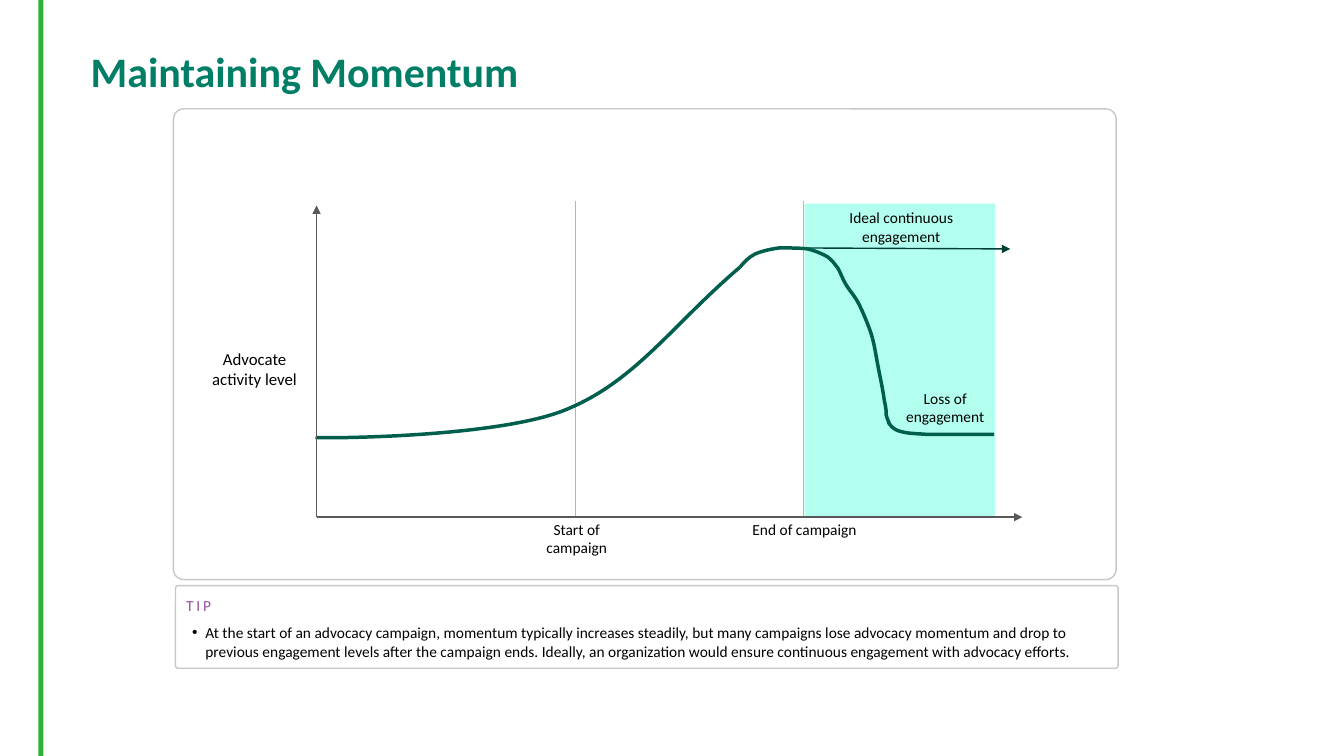
import dataclasses

import pptx
import pptx.dml.color
import pptx.enum.shapes
import pptx.enum.text
import pptx.oxml
import pptx.oxml.ns
import pptx.util

Inches = pptx.util.Inches
Pt = pptx.util.Pt
qn = pptx.oxml.ns.qn
Preset = pptx.enum.shapes.MSO_SHAPE
Anchor = pptx.enum.text.MSO_ANCHOR
Align = pptx.enum.text.PP_ALIGN


@dataclasses.dataclass(frozen=True)
class Theme:
    font: str = "Calibri"
    title_size: int = 30
    axis_size: int = 12
    text_size: int = 11
    title: str = "007E66"
    accent_bar: str = "2EB135"
    highlight: str = "B2FFF0"
    curve: str = "005E4C"
    ideal: str = "003F33"
    axis: str = "595959"
    marker: str = "B4B4B4"
    border: str = "C8C8C8"
    tip: str = "95509D"
    text: str = "000000"
    paper: str = "FFFFFF"


def rgb(value):
    return pptx.dml.color.RGBColor.from_string(value)


def sub_element(parent, tag, **attributes):
    child = parent.makeelement(qn(tag), attributes)
    parent.append(child)
    return child


def write(paragraph, text, *, font, size, color, bold=False, align=Align.LEFT,
          spacing=0, after=0):
    paragraph.alignment = align
    paragraph.space_before = Pt(0)
    paragraph.space_after = Pt(after)
    run = paragraph.add_run()
    run.text = text
    run.font.name = font
    run.font.size = Pt(size)
    run.font.bold = bold
    run.font.color.rgb = rgb(color)
    if spacing:
        run.font._element.set("spc", str(spacing * 100))


def set_bullet(paragraph, left, hanging):
    properties = paragraph._p.get_or_add_pPr()
    properties.set("marL", str(Inches(left)))
    properties.set("indent", str(Inches(-hanging)))
    sub_element(properties, "a:buFont", typeface="Arial")
    sub_element(properties, "a:buChar", char="•")


def set_margins(frame, left, top, right, bottom):
    frame.margin_left, frame.margin_top = Inches(left), Inches(top)
    frame.margin_right, frame.margin_bottom = Inches(right), Inches(bottom)


class SlideBuilder:
    def __init__(self, slide, theme):
        self.slide = slide
        self.theme = theme
        self.shapes = slide.shapes

    def start_group(self):
        self.shapes = self.slide.shapes.add_group_shape().shapes

    def end_group(self):
        self.shapes = self.slide.shapes

    def title(self, text, box):
        heading = self.slide.shapes.title
        heading.left, heading.top, heading.width, heading.height = map(Inches, box)
        heading.text_frame.vertical_anchor = Anchor.MIDDLE
        paragraph = heading.text_frame.paragraphs[0]
        paragraph.line_spacing = 0.9
        write(paragraph, text, font=self.theme.font, size=self.theme.title_size,
              color=self.theme.title, bold=True)

    def panel(self, box, fill=None, border=None, radius=None):
        preset = Preset.RECTANGLE if radius is None else Preset.ROUNDED_RECTANGLE
        shape = self.shapes.add_shape(preset, *map(Inches, box))
        shape.shadow.inherit = False
        if radius is not None:
            shape.adjustments[0] = radius
        if fill:
            shape.fill.solid()
            shape.fill.fore_color.rgb = rgb(fill)
        else:
            shape.fill.background()
        if border:
            shape.line.color.rgb = rgb(border)
            shape.line.width = Pt(1)
        else:
            shape.line.fill.background()
        return shape

    def label(self, text, box, size=None, margins=(0.1, 0.05, 0.1, 0.05)):
        frame = self.shapes.add_textbox(*map(Inches, box)).text_frame
        frame.word_wrap = True
        set_margins(frame, *margins)
        write(frame.paragraphs[0], text, font=self.theme.font,
              size=size or self.theme.text_size, color=self.theme.text,
              align=Align.CENTER)

    def line(self, start, end, color, width, arrow=False):
        """Draw a straight line, with any arrowhead at its start."""
        connector = self.shapes.add_connector(
            pptx.enum.shapes.MSO_CONNECTOR.STRAIGHT, *map(Inches, start + end))
        connector.line.color.rgb = rgb(color)
        connector.line.width = Pt(width)
        if arrow:
            sub_element(connector.line._get_or_add_ln(), "a:headEnd", type="triangle")
        sub_element(connector._element.spPr, "a:effectLst")

    def curve(self, points):
        """Draw cubic segments: a start, then two controls and an end for each."""
        start, *rest = [(Inches(x), Inches(y)) for x, y in points]
        builder = self.shapes.build_freeform(*start)
        builder.add_line_segments(rest, close=False)
        shape = builder.convert_to_shape()
        shape.shadow.inherit = False
        shape.fill.background()
        shape.line.color.rgb = rgb(self.theme.curve)
        shape.line.width = Pt(2.5)
        segments = list(shape._element.iter(qn("a:lnTo")))
        for first in range(0, len(segments), 3):
            outline = segments[first].getparent()
            cubic = sub_element(outline, "a:cubicBezTo")
            for segment in segments[first:first + 3]:
                cubic.append(segment[0])
                outline.remove(segment)

    def tip(self, heading, advice, box):
        theme = self.theme
        frame = self.panel(box, theme.paper, theme.border, radius=0.034).text_frame
        frame.word_wrap = True
        frame.vertical_anchor = Anchor.TOP
        set_margins(frame, 0.1, 0.1, 0.1, 0.05)
        write(frame.paragraphs[0], heading, font=theme.font, size=theme.text_size,
              color=theme.tip, spacing=2, after=6)
        bullet = frame.add_paragraph()
        write(bullet, advice, font=theme.font, size=theme.text_size, color=theme.text)
        set_bullet(bullet, 0.19, 0.13)


RISE = [(7.34, 2.65), (6.66, 3.23), (6.3, 3.79), (5.6, 4.07),
        (4.9, 4.35), (3.13, 4.35), (3.13, 4.34)]
PEAK_AND_FALL = [
    (7.34, 2.65), (7.38, 2.6), (7.43, 2.55), (7.49, 2.52),
    (7.56, 2.49), (7.65, 2.47), (7.73, 2.46),
    (7.82, 2.46), (7.93, 2.46), (8.01, 2.47),
    (8.09, 2.49), (8.16, 2.52), (8.21, 2.55),
    (8.26, 2.59), (8.27, 2.61), (8.31, 2.66),
    (8.34, 2.71), (8.36, 2.78), (8.4, 2.84),
    (8.44, 2.9), (8.48, 2.94), (8.52, 3.02),
    (8.56, 3.1), (8.61, 3.22), (8.64, 3.31),
    (8.67, 3.41), (8.68, 3.48), (8.7, 3.59),
    (8.72, 3.7), (8.76, 3.88), (8.77, 3.97),
    (8.79, 4.06), (8.79, 4.08), (8.79, 4.12),
    (8.8, 4.16), (8.82, 4.2), (8.82, 4.2)]
LEVELLING_OFF = [(8.81, 4.19), (8.84, 4.23), (8.86, 4.26), (8.93, 4.28),
                 (9, 4.3), (9.06, 4.3), (9.21, 4.31),
                 (9.37, 4.31), (9.86, 4.31), (9.86, 4.31)]


def draw_momentum_diagram(page):
    theme = page.theme
    page.start_group()
    page.panel((7.98, 2.02, 1.89, 3.1), theme.highlight)
    milestones = (("Start of campaign", 5.71, 0.47), ("End of campaign", 7.97, 0.29))
    for _, x, _ in milestones:
        page.line((x, 5.12), (x, 1.99), theme.marker, 0.75)
    for name, x, height in milestones:
        page.label(name, (x - 0.63, 5.11, 1.28, height))
    page.line((10.02, 2.47), (7.95, 2.46), theme.ideal, 1, arrow=True)
    page.label("Loss of engagement", (8.85, 3.81, 1.05, 0.47))
    page.label("Ideal continuous engagement", (8.01, 2.02, 1.86, 0.47))
    for stage in (PEAK_AND_FALL, LEVELLING_OFF, RISE):
        page.curve(stage)
    origin = (3.14, 5.13)
    for axis_tip in ((3.14, 2.04), (10.14, 5.13)):
        page.line(axis_tip, origin, theme.axis, 1.25, arrow=True)
    page.label("Advocate activity level", (1.97, 3.41, 1.11, 0.5),
               size=theme.axis_size, margins=(0.05,) * 4)
    page.end_group()


def main():
    deck = pptx.Presentation()
    deck.slide_width, deck.slide_height = Inches(13.33), Inches(7.5)
    theme = Theme()
    page = SlideBuilder(deck.slides.add_slide(deck.slide_layouts[5]), theme)
    page.panel((0.38, 0, 0.05, 7.5), theme.accent_bar)
    page.title("Maintaining Momentum", (0.8, 0.23, 11.5, 1))
    draw_momentum_diagram(page)
    page.tip("TIP",
             "At the start of an advocacy campaign, momentum typically increases "
             "steadily, but many campaigns lose advocacy momentum and drop to previous "
             "engagement levels after the campaign ends. Ideally, an organization would "
             "ensure continuous engagement with advocacy efforts.",
             (1.74, 5.81, 9.35, 0.82))
    page.panel((1.72, 1.08, 9.35, 4.67), border=theme.border, radius=0.022)
    deck.save("out.pptx")


if __name__ == "__main__":
    main()
